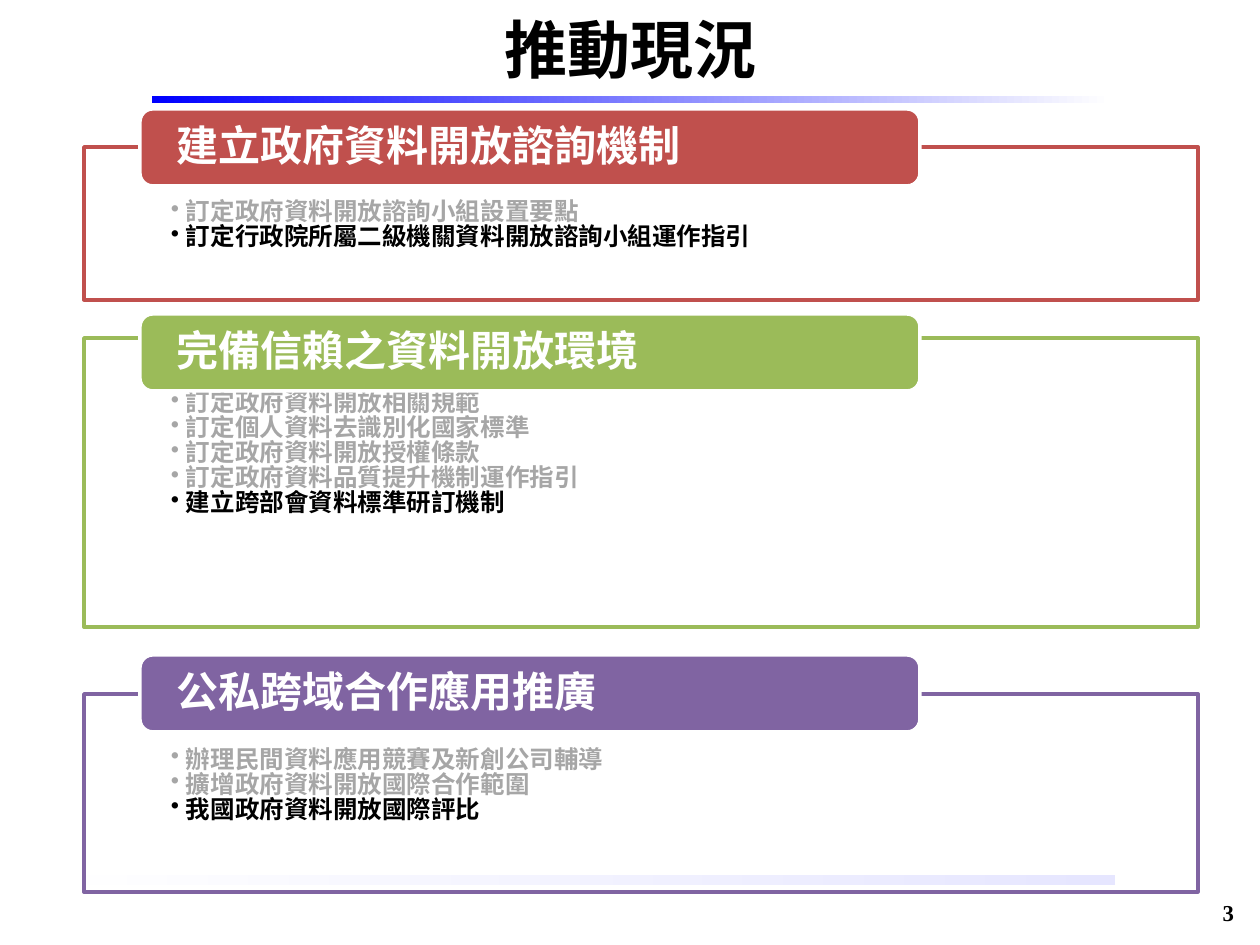
from lxml.etree import SubElement
from pptx import Presentation
from pptx.dml.color import RGBColor
from pptx.enum.shapes import MSO_SHAPE as SHAPE
from pptx.enum.text import MSO_ANCHOR as ANCHOR, PP_ALIGN as ALIGN
from pptx.oxml.ns import qn
from pptx.util import Emu, Pt

WHITE = RGBColor(0xFF, 0xFF, 0xFF)
BLACK = RGBColor(0x00, 0x00, 0x00)
BLUE = RGBColor(0x00, 0x00, 0xFF)
GRAY = RGBColor(0xA6, 0xA6, 0xA6)
RED = RGBColor(0xC0, 0x50, 0x4D)
GREEN = RGBColor(0x9B, 0xBB, 0x59)
PURPLE = RGBColor(0x80, 0x64, 0xA2)
SANS, SERIF = "Noto Sans CJK SC", "Times New Roman"

TITLE = "推動現況"
PAGE = "3"
BARS = [((78, 875, 1037, 10), WHITE, BLUE), ((152, 96, 960, 7), BLUE, WHITE)]
# heading, colour, frame top, frame height, tab top, items (the last one is current)
SECTIONS = [
    ("建立政府資料開放諮詢機制", RED, 147, 153, 109,
     ["訂定政府資料開放諮詢小組設置要點",
      "訂定行政院所屬二級機關資料開放諮詢小組運作指引"]),
    ("完備信賴之資料開放環境", GREEN, 338, 289, 314,
     ["訂定政府資料開放相關規範", "訂定個人資料去識別化國家標準",
      "訂定政府資料開放授權條款", "訂定政府資料品質提升機制運作指引",
      "建立跨部會資料標準研訂機制"]),
    ("公私跨域合作應用推廣", PURPLE, 694, 198, 655,
     ["辦理民間資料應用競賽及新創公司輔導", "擴增政府資料開放國際合作範圍",
      "我國政府資料開放國際評比"]),
]
FRAME_X, FRAME_W = 84, 1114
TAB_X, TAB_W, TAB_H = 140, 780, 77
INDENT = 15


def px(n):
    return Emu(round(n * 914400 / 126))


def add_shape(slide, kind, box, line=None):
    s = slide.shapes.add_shape(kind, *map(px, box))
    s.shadow.inherit = False
    if line is None:
        s.line.fill.background()
    else:
        s.line.color.rgb = line
        s.line.width = Pt(2)
    return s


def set_frame(s, anchor, insets):
    tf = s.text_frame
    tf.word_wrap = True
    tf.vertical_anchor = anchor
    tf.margin_left, tf.margin_top, tf.margin_right, tf.margin_bottom = map(px, insets)
    return tf


def add_run(p, text, size, color, align=ALIGN.LEFT, font=SANS):
    p.alignment = align
    r = p.add_run()
    r.text = text
    r.font.name, r.font.size, r.font.bold = font, Pt(size), True
    r.font.color.rgb = color
    SubElement(r.font._element, qn("a:ea"), typeface=font)


def add_bar(slide, box, start, end):
    s = add_shape(slide, SHAPE.RECTANGLE, box)
    s.fill.gradient()
    s.fill.gradient_angle = 0
    for stop, color in zip(s.fill.gradient_stops, (start, end)):
        stop.color.rgb = color


def add_label(slide, box, anchor, text, size, align, font):
    s = slide.shapes.add_textbox(*map(px, box))
    tf = set_frame(s, anchor, (13, 6, 13, 6))
    add_run(tf.paragraphs[0], text, size, BLACK, align, font)


def add_section(slide, heading, color, top, height, tab_top, items):
    s = add_shape(slide, SHAPE.RECTANGLE, (FRAME_X, top, FRAME_W, height), color)
    s.fill.solid()
    s.fill.fore_color.rgb = WHITE
    rgb = s.fill._xPr.find(".//" + qn("a:srgbClr"))
    SubElement(rgb, qn("a:alpha"), val="90000")
    tf = set_frame(s, ANCHOR.TOP, (87, 54, 87, 14))
    for i, item in enumerate(items):
        p = tf.paragraphs[0] if i == 0 else tf.add_paragraph()
        p.line_spacing = 0.85
        pPr = p._p.get_or_add_pPr()
        pPr.set("marL", str(px(INDENT)))
        pPr.set("indent", str(-px(INDENT)))
        SubElement(pPr, qn("a:buChar"), char="•")
        add_run(p, item, 14, BLACK if item == items[-1] else GRAY)

    s = add_shape(slide, SHAPE.ROUNDED_RECTANGLE, (TAB_X, tab_top, TAB_W, TAB_H), WHITE)
    s.fill.solid()
    s.fill.fore_color.rgb = color
    p = set_frame(s, ANCHOR.MIDDLE, (33, 0, 33, 0)).paragraphs[0]
    p.line_spacing = 0.9
    add_run(p, heading, 24, WHITE)


def main():
    """Build the slide and save it."""
    prs = Presentation()
    prs.slide_width, prs.slide_height = px(1260), px(945)
    slide = prs.slides.add_slide(prs.slide_layouts[6])
    for bar in BARS:
        add_bar(slide, *bar)
    add_label(slide, (64, 4, 1134, 89), ANCHOR.MIDDLE, TITLE, 36, ALIGN.CENTER, SANS)
    for section in SECTIONS:
        add_section(slide, *section)
    add_label(slide, (1150, 893, 97, 30), ANCHOR.TOP, PAGE, 13, ALIGN.RIGHT, SERIF)
    prs.save("out.pptx")


if __name__ == "__main__":
    main()
